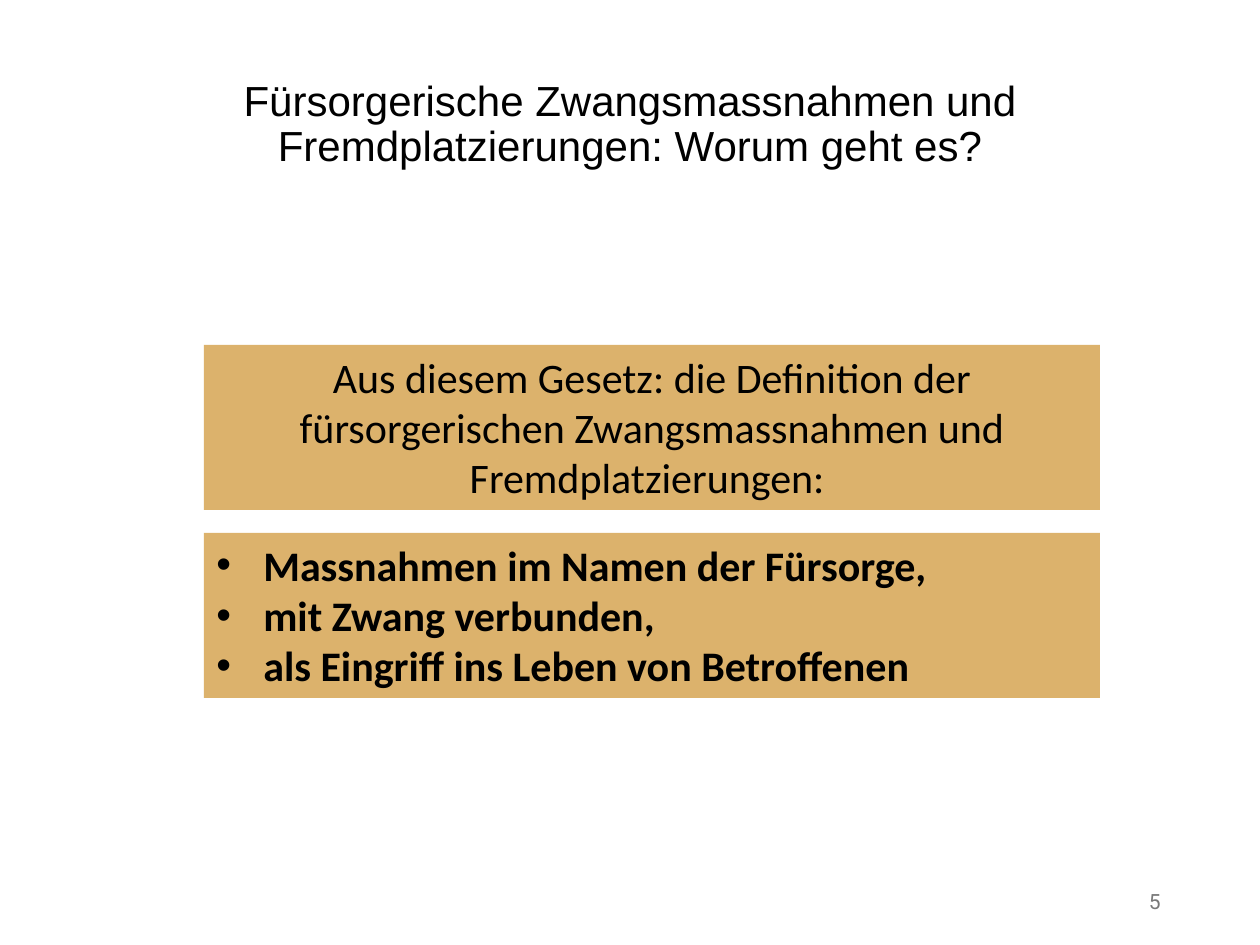
from dataclasses import dataclass

import pptx
import pptx.dml.color
import pptx.enum.shapes
import pptx.enum.text
import pptx.oxml.ns
import pptx.util
from lxml import etree

EMU_PER_INCH = 914400
PX_PER_INCH = 126
COLORS = {"black": "000000", "gray": "797979", "sand": "DCB26C"}
ALIGN = pptx.enum.text.PP_ALIGN
ANCHOR = pptx.enum.text.MSO_ANCHOR


@dataclass(frozen=True)
class TextBlock:
    left: int
    top: int
    width: int
    height: int
    lines: tuple[str, ...]
    font: str
    size: int = 24
    color: str = "black"
    fill: str | None = None
    align: int = ALIGN.LEFT
    anchor: int = ANCHOR.MIDDLE
    line_spacing: float = 1.0
    bold: bool = False
    bulleted: bool = False


PANEL = {"left": 204, "width": 896, "height": 165, "font": "Calibri",
         "fill": "sand", "anchor": ANCHOR.TOP}
BLOCKS = (
    TextBlock(
        top=345, align=ALIGN.CENTER,
        lines=("Aus diesem Gesetz: die Definition der fürsorgerischen "
               "Zwangsmassnahmen und Fremdplatzierungen: ",), **PANEL),
    TextBlock(890, 876, 283, 50, ("5",), "Roboto", size=12, color="gray",
              align=ALIGN.RIGHT),
    TextBlock(
        87, 50, 1086, 151,
        ("Fürsorgerische Zwangsmassnahmen und Fremdplatzierungen: "
         "Worum geht es?",),
        "Arial", align=ALIGN.CENTER, line_spacing=0.9),
    TextBlock(
        top=533, bold=True, bulleted=True,
        lines=("Massnahmen im Namen der Fürsorge,", "mit Zwang verbunden,",
               "als Eingriff ins Leben von Betroffenen"), **PANEL),
)
BULLET_INDENT = 47


def px(length: int) -> pptx.util.Emu:
    return pptx.util.Emu(round(length * EMU_PER_INCH / PX_PER_INCH))


def rgb(name: str) -> pptx.dml.color.RGBColor:
    return pptx.dml.color.RGBColor.from_string(COLORS[name])


def add_bullet(paragraph) -> None:
    properties = paragraph._p.get_or_add_pPr()
    properties.set("marL", str(px(BULLET_INDENT)))
    properties.set("indent", str(-px(BULLET_INDENT)))
    qn = pptx.oxml.ns.qn
    etree.SubElement(properties, qn("a:buFont"), typeface="Arial")
    etree.SubElement(properties, qn("a:buChar"), char="•")


def draw_block(slide, block: TextBlock) -> None:
    bounds = [px(n) for n in (block.left, block.top, block.width, block.height)]
    if block.fill:
        shape = slide.shapes.add_shape(
            pptx.enum.shapes.MSO_SHAPE.RECTANGLE, *bounds)
        shape.shadow.inherit = False
        shape.fill.solid()
        shape.fill.fore_color.rgb = rgb(block.fill)
        shape.line.fill.background()
    else:
        shape = slide.shapes.add_textbox(*bounds)
    frame = shape.text_frame
    frame.word_wrap = True
    frame.vertical_anchor = block.anchor
    frame.text = "\n".join(block.lines)
    for paragraph in frame.paragraphs:
        paragraph.alignment = block.align
        paragraph.line_spacing = block.line_spacing
        paragraph.font.name = block.font
        paragraph.font.size = pptx.util.Pt(block.size)
        paragraph.font.bold = block.bold
        paragraph.font.color.rgb = rgb(block.color)
        if block.bulleted:
            add_bullet(paragraph)


def main() -> None:
    presentation = pptx.Presentation()
    presentation.slide_width = px(1260)
    presentation.slide_height = px(945)
    slide = presentation.slides.add_slide(presentation.slide_layouts[6])
    for block in BLOCKS:
        draw_block(slide, block)
    presentation.save("out.pptx")


if __name__ == "__main__":
    main()
